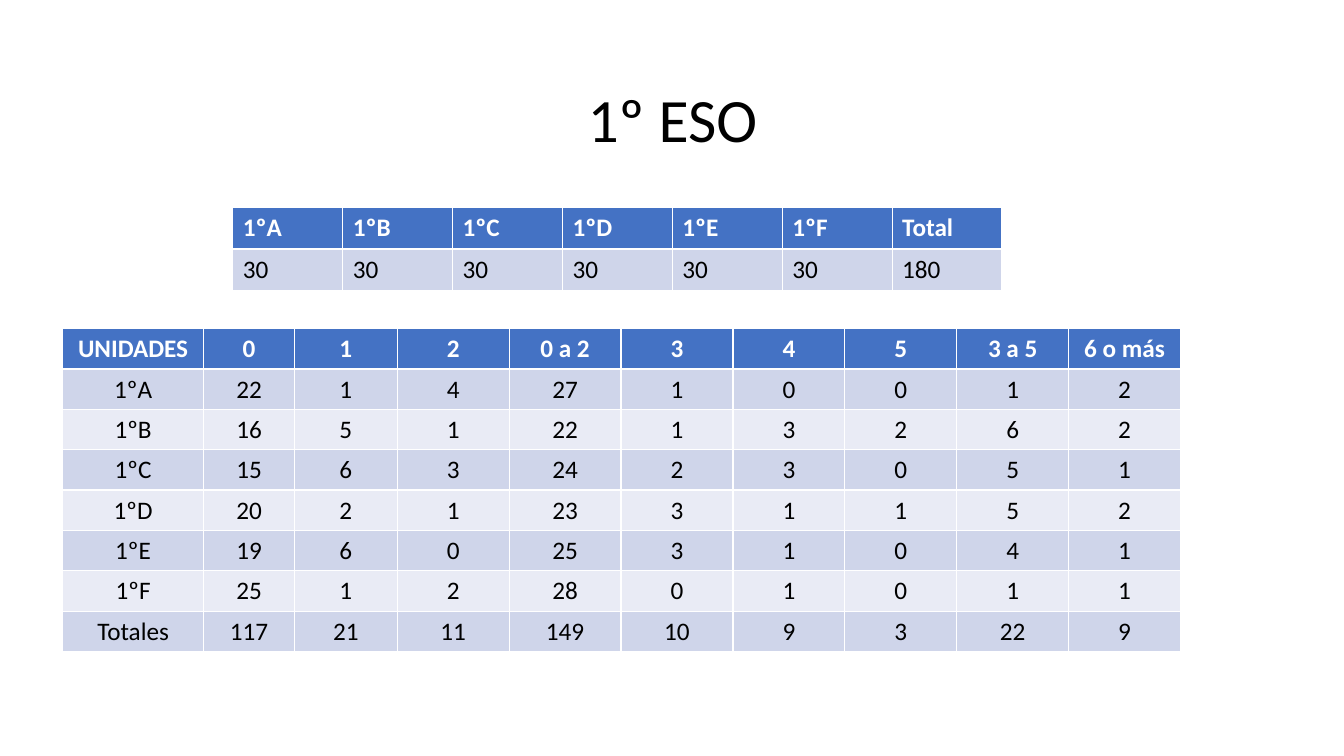
from dataclasses import dataclass

from pptx import Presentation
from pptx.dml.color import RGBColor
from pptx.enum.text import MSO_ANCHOR, PP_ALIGN
from pptx.slide import Slide
from pptx.text.text import TextFrame
from pptx.util import Inches, Pt

LEFT, CENTER = PP_ALIGN.LEFT, PP_ALIGN.CENTER
TOP, MIDDLE = MSO_ANCHOR.TOP, MSO_ANCHOR.MIDDLE

BLACK = RGBColor(0x00, 0x00, 0x00)
WHITE = RGBColor(0xFF, 0xFF, 0xFF)
BLUE = RGBColor(0x44, 0x72, 0xC4)
BAND_DARK = RGBColor(0xCF, 0xD5, 0xEA)
BAND_LIGHT = RGBColor(0xE9, 0xEB, 0xF5)
FONT = "Calibri"


@dataclass
class TableSpec:
    left: float
    top: float
    col_widths: list[float]
    row_height: float
    rows: list[list[str]]
    align: PP_ALIGN
    anchor: MSO_ANCHOR


GROUPS = TableSpec(
    2.31, 2.06, [1.09] * 7, 0.41,
    [
        ["1ºA", "1ºB", "1ºC", "1ºD", "1ºE", "1ºF", "Total"],
        ["30"] * 6 + ["180"],
    ],
    LEFT, MIDDLE,
)

UNITS = TableSpec(
    0.62, 3.26, [1.4, 0.9, 1.02] + [1.11] * 7, 0.4,
    [
        ["UNIDADES", "0", "1", "2", "0 a 2", "3", "4", "5", "3 a 5", "6 o más"],
        ["1ºA", "22", "1", "4", "27", "1", "0", "0", "1", "2"],
        ["1ºB", "16", "5", "1", "22", "1", "3", "2", "6", "2"],
        ["1ºC", "15", "6", "3", "24", "2", "3", "0", "5", "1"],
        ["1ºD", "20", "2", "1", "23", "3", "1", "1", "5", "2"],
        ["1ºE", "19", "6", "0", "25", "3", "1", "0", "4", "1"],
        ["1ºF", "25", "1", "2", "28", "0", "1", "0", "1", "1"],
        ["Totales", "117", "21", "11", "149", "10", "9", "3", "22", "9"],
    ],
    CENTER, TOP,
)


def write_text(tf: TextFrame, text: str, *, size: float = 18,
               color: RGBColor = BLACK, bold: bool = False,
               align: PP_ALIGN = CENTER, spacing: float = 1.0) -> None:
    p = tf.paragraphs[0]
    p.alignment = align
    p.line_spacing = spacing
    r = p.add_run()
    r.text = text
    r.font.name = FONT
    r.font.size = Pt(size)
    r.font.bold = bold
    r.font.color.rgb = color


def add_title(s: Slide, text: str) -> None:
    sp = s.shapes.add_textbox(Inches(0.92), Inches(0.49), Inches(11.5), Inches(1.45))
    tf = sp.text_frame
    tf.word_wrap = True
    tf.vertical_anchor = MIDDLE
    write_text(tf, text, size=44, spacing=0.9)


def draw_table(s: Slide, table: TableSpec) -> None:
    sp = s.shapes.add_table(
        len(table.rows), len(table.col_widths),
        Inches(table.left), Inches(table.top),
        Inches(sum(table.col_widths)), Inches(table.row_height * len(table.rows)),
    )
    grid = sp.table
    for column, width in zip(grid.columns, table.col_widths):
        column.width = Inches(width)
    for i, values in enumerate(table.rows):
        grid.rows[i].height = Inches(table.row_height)
        header = i == 0
        band = BAND_DARK if i % 2 else BAND_LIGHT
        for j, value in enumerate(values):
            cell = grid.cell(i, j)
            cell.vertical_anchor = table.anchor
            cell.fill.solid()
            cell.fill.fore_color.rgb = BLUE if header else band
            write_text(cell.text_frame, value, bold=header,
                       color=WHITE if header else BLACK, align=table.align)


def main() -> None:
    prs = Presentation()
    prs.slide_width = Inches(13.33)
    prs.slide_height = Inches(7.5)
    s = prs.slides.add_slide(prs.slide_layouts[6])
    add_title(s, "1º ESO")
    for table in (GROUPS, UNITS):
        draw_table(s, table)
    prs.save("out.pptx")


if __name__ == "__main__":
    main()
